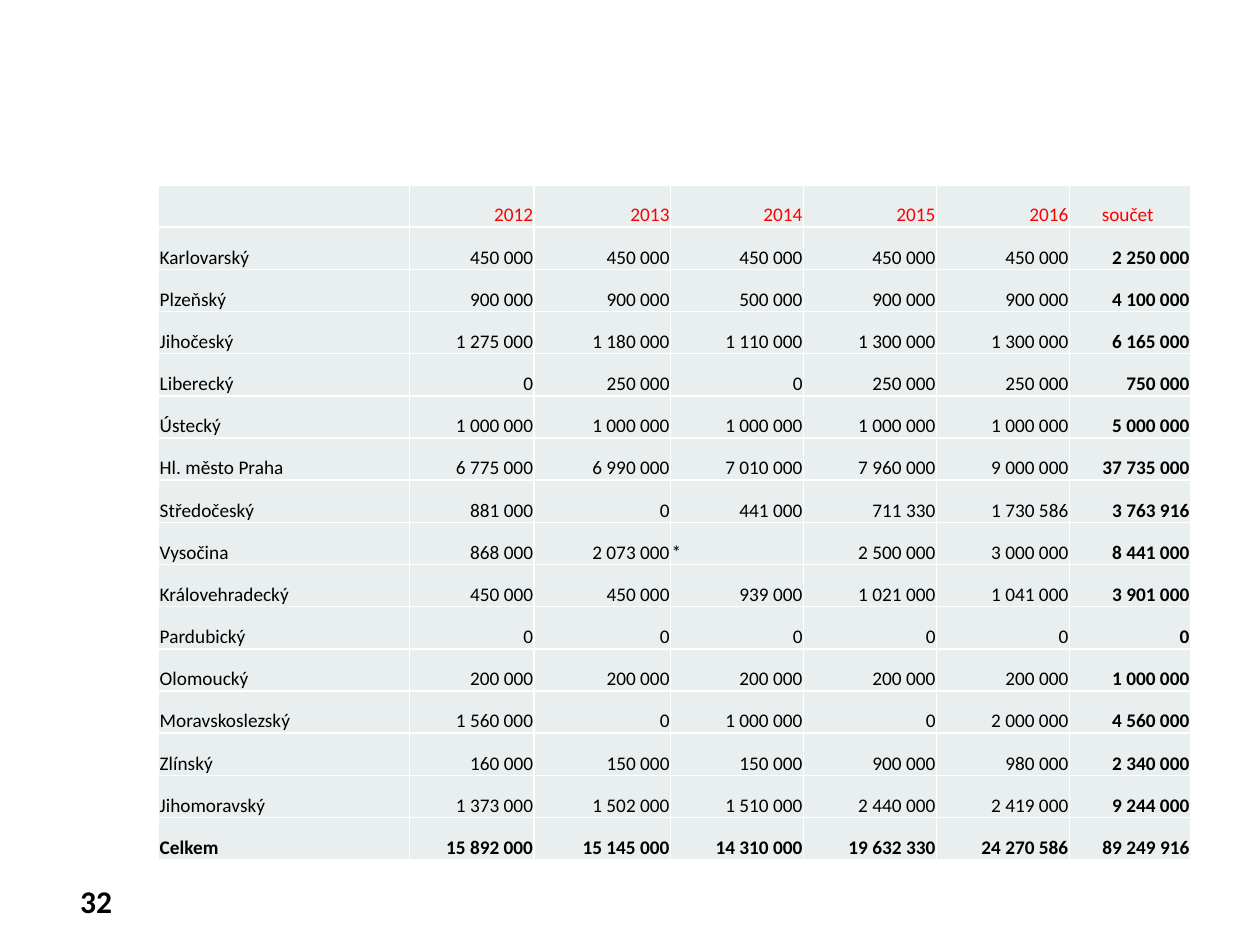
from typing import NamedTuple

from lxml.etree import SubElement
from pptx import Presentation
from pptx.dml.color import RGBColor
from pptx.enum.text import MSO_ANCHOR, PP_ALIGN
from pptx.oxml.ns import qn
from pptx.util import Cm, Pt

HUES = {"ink": "000000", "head": "FF0000", "cell": "E9EEEF", "rule": "FFFFFF"}
FONT = "Calibri"
WIDTHS = (5.06, 2.51, 2.75, 2.68, 2.68, 2.68, 2.44)
ROW_H = 0.85
HEADS = ("", "2012", "2013", "2014", "2015", "2016", "součet ")


class Region(NamedTuple):
    name: str
    years: tuple
    total: int


REGIONS = (
    Region("Karlovarský", (450000, 450000, 450000, 450000, 450000), 2250000),
    Region("Plzeňský", (900000, 900000, 500000, 900000, 900000), 4100000),
    Region("Jihočeský", (1275000, 1180000, 1110000, 1300000, 1300000), 6165000),
    Region("Liberecký", (0, 250000, 0, 250000, 250000), 750000),
    Region("Ústecký", (1000000, 1000000, 1000000, 1000000, 1000000), 5000000),
    Region("Hl. město Praha", (6775000, 6990000, 7010000, 7960000, 9000000), 37735000),
    Region("Středočeský", (881000, 0, 441000, 711330, 1730586), 3763916),
    Region("Vysočina", (868000, 2073000, "*", 2500000, 3000000), 8441000),
    Region("Královehradecký", (450000, 450000, 939000, 1021000, 1041000), 3901000),
    Region("Pardubický", (0, 0, 0, 0, 0), 0),
    Region("Olomoucký", (200000, 200000, 200000, 200000, 200000), 1000000),
    Region("Moravskoslezský", (1560000, 0, 1000000, 0, 2000000), 4560000),
    Region("Zlínský", (160000, 150000, 150000, 900000, 980000), 2340000),
    Region("Jihomoravský", (1373000, 1502000, 1510000, 2440000, 2419000), 9244000),
    Region("Celkem", (15892000, 15145000, 14310000, 19632330, 24270586), 89249916),
)


def style(par, size: float, hue: str, bold: bool, align) -> None:
    par.alignment = align
    font = par.font
    font.name, font.size, font.bold = FONT, Pt(size), bold
    font.color.rgb = RGBColor.from_string(HUES[hue])


def edge(cell) -> None:
    """Rule all four sides of a cell."""
    props = cell._tc.get_or_add_tcPr()
    for tag in ("a:lnL", "a:lnR", "a:lnT", "a:lnB"):
        line = SubElement(props, qn(tag), w=str(Pt(1)))
        fill = SubElement(line, qn("a:solidFill"))
        SubElement(fill, qn("a:srgbClr"), val=HUES["rule"])


def write(cell, value, hue: str, bold: bool, align) -> None:
    edge(cell)
    cell.fill.solid()
    cell.fill.fore_color.rgb = RGBColor.from_string(HUES["cell"])
    cell.vertical_anchor = MSO_ANCHOR.BOTTOM
    cell.margin_left = cell.margin_right = cell.margin_top = Cm(0.02)
    cell.margin_bottom = 0
    is_num = isinstance(value, int)
    cell.text = f"{value:,}".replace(",", " ") if is_num else value
    style(cell.text_frame.paragraphs[0], 11, hue, bold, align)


def draw_grid(slide) -> None:
    count, last = len(REGIONS) + 1, len(HEADS) - 1
    frame = slide.shapes.add_table(count, len(HEADS), Cm(3.2), Cm(3.73),
                                   Cm(sum(WIDTHS)), Cm(ROW_H * count))
    grid = frame.table
    for col, width in zip(grid.columns, WIDTHS):
        col.width = Cm(width)
    for row in grid.rows:
        row.height = Cm(ROW_H)

    # Year headings
    for c, head in enumerate(HEADS):
        align = PP_ALIGN.CENTER if c == last else PP_ALIGN.RIGHT
        write(grid.cell(0, c), head, "head", False, align)

    # Regions, with bold sums in the last column and row
    for r, area in enumerate(REGIONS, 1):
        for c, value in enumerate((area.name, *area.years, area.total)):
            bold = c == last or r == count - 1
            align = PP_ALIGN.RIGHT if isinstance(value, int) else PP_ALIGN.LEFT
            write(grid.cell(r, c), value, "ink", bold, align)


def draw_page(slide, number: str) -> None:
    box = slide.shapes.add_textbox(Cm(0.71), Cm(17.65), Cm(1.8), Cm(1.02))
    text = box.text_frame
    text.word_wrap = True
    text.vertical_anchor = MSO_ANCHOR.MIDDLE
    text.text = number
    style(text.paragraphs[0], 18, "ink", True, PP_ALIGN.RIGHT)


def main() -> None:
    deck = Presentation()
    deck.slide_width, deck.slide_height = Cm(25.4), Cm(19.05)
    slide = deck.slides.add_slide(deck.slide_layouts[6])
    draw_page(slide, "32")
    draw_grid(slide)
    deck.save("out.pptx")


if __name__ == "__main__":
    main()
